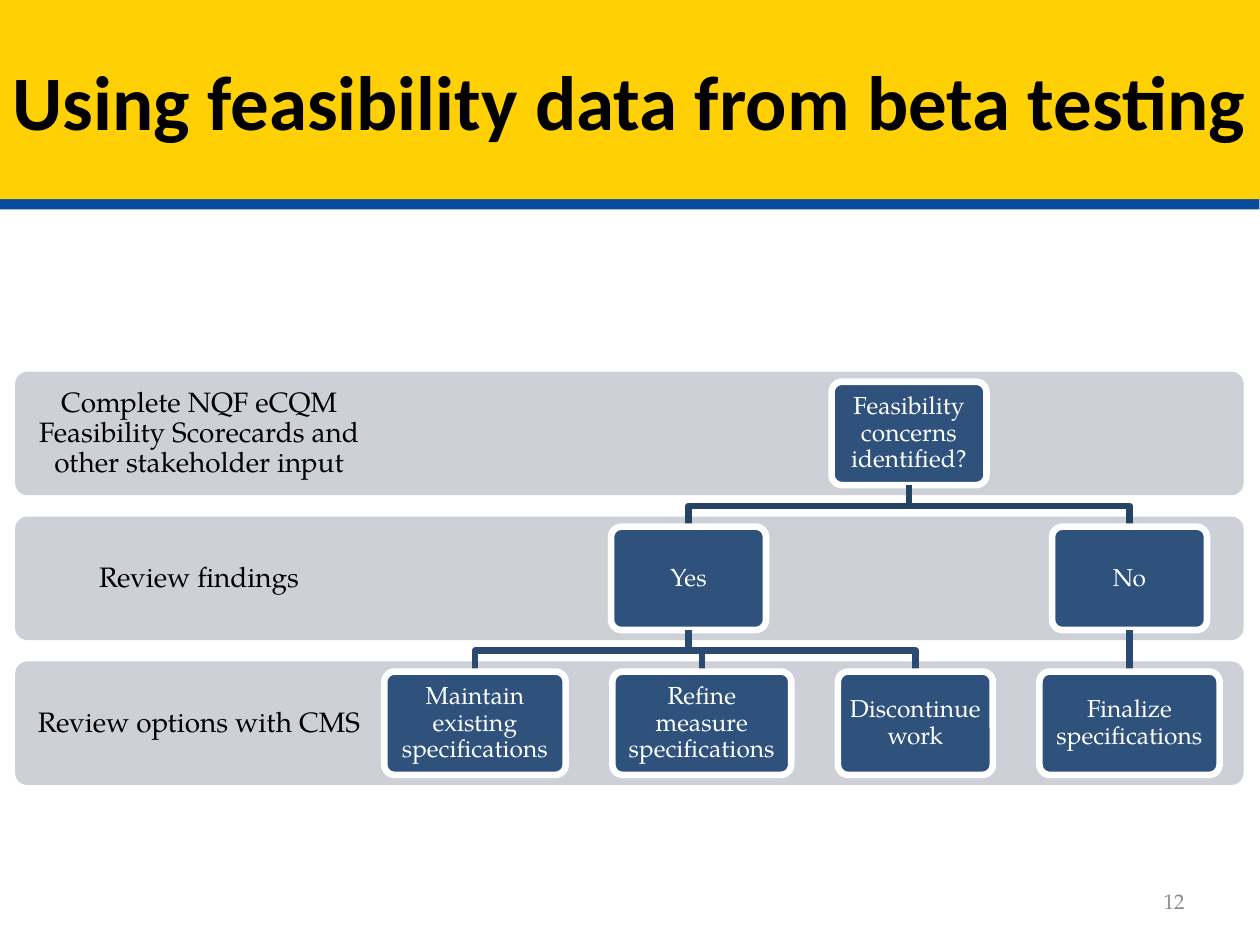
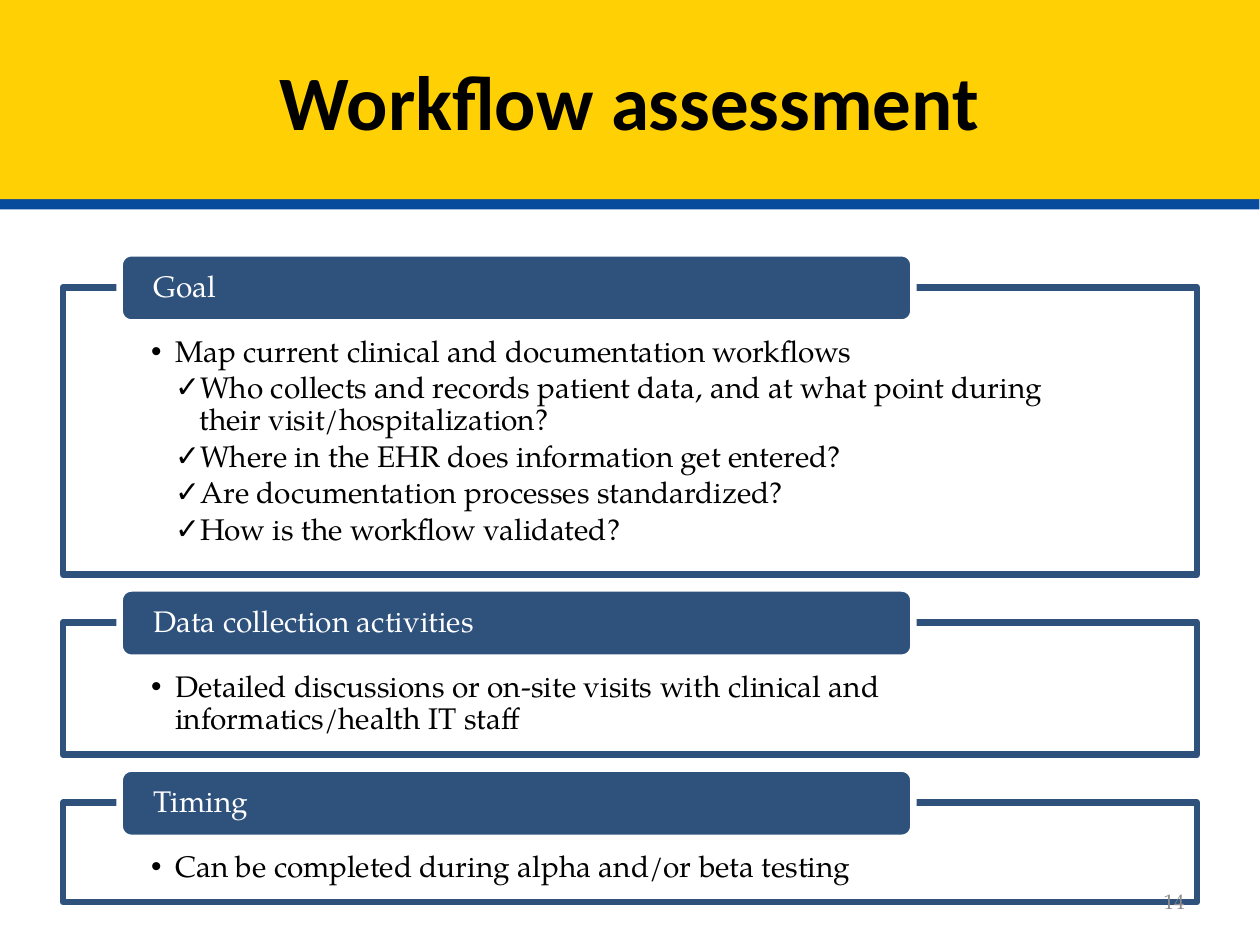
from dataclasses import dataclass
from typing import Any, NamedTuple

from lxml import etree
from pptx import Presentation
from pptx import util as u
from pptx.dml.color import RGBColor
from pptx.enum import shapes, text
from pptx.oxml.ns import qn

EMU_PER_PX = 9144  # 100 px to the inch
SLIDE_W, SLIDE_H = 1000, 750


@dataclass(frozen=True)
class Theme:
    yellow: str = "FFD004"
    blue: str = "084A9C"
    navy: str = "2F527D"
    links: tuple[str, ...] = ("264264", "2B4A71")
    band: str = "CDD1D7"
    gray: str = "8C8C8C"
    black: str = "000000"
    white: str = "FFFFFF"
    heading_font: str = "Calibri"
    body_font: str = "TeX Gyre Pagella"
    title_pt: int = 44
    list_pt: int = 17
    stage_pt: int = 16
    node_pt: int = 14
    number_pt: int = 12
    line_pt: float = 3.78


THEME = Theme()


class Box(NamedTuple):
    left: int
    top: int
    width: int
    height: int


class Node(NamedTuple):
    label: str
    left: int
    width: int
    children: tuple["Node", ...] = ()


class Section(NamedTuple):
    heading: str
    height: int
    bullet: str
    checks: tuple[str, ...] = ()


# Decision tree
STAGES = (
    "Complete NQF eCQM Feasibility Scorecards and other stakeholder input",
    "Review findings",
    "Review options with CMS",
)
STAGE_TOP, STAGE_PITCH, STAGE_H = 295, 115, 98
NODE_INSET, NODE_H = 8, 82
DECISION = Node("Feasibility concerns identified?", 660, 123, (
    Node("Yes", 485, 123, (
        Node("Maintain existing specifications", 305, 144),
        Node("Refine measure specifications", 486, 142),
        Node("Discontinue work", 665, 123),
    )),
    Node("No", 835, 123, (
        Node("Finalize specifications", 825, 143),
    )),
))

# Workflow sections
SECTIONS = (
    Section("Goal", 228, "Map current clinical and documentation workflows", (
        "Who collects and records patient data, and at what point during "
        "their visit/hospitalization?",
        "Where in the EHR does information get entered?",
        "Are documentation processes standardized?",
        "How is the workflow validated?",
    )),
    Section("Data collection activities", 105,
            "Detailed discussions or on-site visits with clinical and "
            "informatics/health IT staff"),
    Section("Timing", 79, "Can be completed during alpha and/or beta testing"),
)
SECTION_TOP, SECTION_GAP, TAB_RISE = 228, 38, 27
LIST_INDENT = 19


def px(length: float) -> u.Emu:
    return u.Emu(round(length * EMU_PER_PX))


def apply(target: Any, values: dict[str, Any]) -> None:
    for name, value in values.items():
        setattr(target, name, value)


def place(shape: Any, box: Box) -> None:
    apply(shape, {name: px(value) for name, value in box._asdict().items()})


def paint(shape: Any, fill: str | None = None, line: str | None = None) -> None:
    for part, color in ((shape.fill, fill), (shape.line.fill, line)):
        if color:
            part.solid()
            part.fore_color.rgb = RGBColor.from_string(color)
        else:
            part.background()
    if line:
        shape.line.width = u.Pt(THEME.line_pt)
    shape.shadow.inherit = False


def frame_text(shape: Any, insets: tuple[int, int, int, int], anchor: Any) -> None:
    names = ("margin_left", "margin_top", "margin_right", "margin_bottom")
    apply(shape.text_frame, {
        "word_wrap": True,
        "auto_size": text.MSO_AUTO_SIZE.NONE,
        "vertical_anchor": anchor,
        **{name: px(inset) for name, inset in zip(names, insets)},
    })


def format_paragraph(paragraph: Any, size: int, color: str, align: Any,
                     font: str = THEME.body_font, bold: bool = False,
                     spacing: float = 0.9, after: float = 0) -> None:
    apply(paragraph, {"alignment": align, "line_spacing": spacing,
                      "space_before": u.Pt(0), "space_after": u.Pt(after)})
    apply(paragraph.font, {"name": font, "size": u.Pt(size), "bold": bold})
    paragraph.font.color.rgb = RGBColor.from_string(color)


def write(shape: Any, words: str, size: int, color: str, inset: tuple[int, int],
          align: Any = text.PP_ALIGN.CENTER, **style: Any) -> None:
    frame_text(shape, inset * 2, text.MSO_ANCHOR.MIDDLE)
    paragraph = shape.text_frame.paragraphs[0]
    paragraph.text = words
    format_paragraph(paragraph, size, color, align, **style)


def add_rounded(slide: Any, box: Box, fill: str, line: str | None = None,
                corner: float = 0.1) -> Any:
    shape = slide.shapes.add_shape(shapes.MSO_SHAPE.ROUNDED_RECTANGLE, *map(px, box))
    shape.adjustments[0] = corner
    paint(shape, fill, line)
    return shape


def add_titled_slide(deck: Any, layout: int, title: str) -> Any:
    slide = deck.slides.add_slide(deck.slide_layouts[layout])
    banner = slide.shapes.title
    place(banner, Box(0, 0, SLIDE_W, 158))
    paint(banner, THEME.yellow)
    # Solid blue shadow forms the stripe below the banner
    effects = banner._element.spPr.find(qn("a:effectLst"))
    stripe = etree.SubElement(effects, qn("a:outerShdw"), blurRad="0",
                              dist=str(u.Pt(6)), dir=str(94 * 60000),
                              algn="ctr", rotWithShape="0")
    etree.SubElement(stripe, qn("a:srgbClr"), val=THEME.blue)
    write(banner, title, THEME.title_pt, THEME.black, (5, 5),
          font=THEME.heading_font, bold=True, spacing=1.0)
    return slide


def add_number(slide: Any, number: int) -> None:
    page = slide.shapes.add_textbox(*map(px, Box(717, 695, 233, 40)))
    write(page, str(number), THEME.number_pt, THEME.gray, (10, 5),
          text.PP_ALIGN.RIGHT, spacing=1.0)


def link_nodes(slide: Any, parent: Any, child: Any, color: str) -> None:
    start_x, end_x = (shape.left + shape.width // 2 for shape in (parent, child))
    start_y, end_y = parent.top + parent.height, child.top
    if start_x == end_x:
        link = slide.shapes.add_connector(shapes.MSO_CONNECTOR.STRAIGHT,
                                          start_x, start_y, end_x, end_y)
        link.begin_connect(parent, 2)
        link.end_connect(child, 0)
        link.line.color.rgb = RGBColor.from_string(color)
        link.line.width = u.Pt(THEME.line_pt)
        etree.SubElement(link._element.spPr, qn("a:effectLst"))
    else:
        middle_y = (start_y + end_y) // 2
        elbow = slide.shapes.build_freeform(start_x, start_y)
        elbow.add_line_segments(
            [(start_x, middle_y), (end_x, middle_y), (end_x, end_y)], close=False)
        link = elbow.convert_to_shape()
        paint(link, line=color)
    child._element.addprevious(link._element)


def add_node(slide: Any, node: Node, level: int = 0, parent: Any = None) -> None:
    top = STAGE_TOP + level * STAGE_PITCH + NODE_INSET
    shape = add_rounded(slide, Box(node.left, top, node.width, NODE_H),
                        THEME.navy, THEME.white)
    write(shape, node.label, THEME.node_pt, THEME.white, (6, 6))
    if parent is not None:
        link_nodes(slide, parent, shape, THEME.links[level - 1])
    for child in node.children:
        add_node(slide, child, level + 1, shape)


def add_bullet(paragraph: Any, mark: str, level: int) -> None:
    paragraph.level = level
    properties = paragraph._p.get_or_add_pPr()
    properties.set("marL", str(px(LIST_INDENT * (level + 1))))
    properties.set("indent", str(-px(LIST_INDENT)))
    etree.SubElement(properties, qn("a:buFont"), typeface="Arial")
    etree.SubElement(properties, qn("a:buChar"), char=mark)


def add_section(slide: Any, panel: Any, section: Section, top: int) -> None:
    # The list panel is a body placeholder with an outline
    place(panel, Box(50, top, 900, section.height))
    paint(panel, THEME.white, THEME.navy)
    frame_text(panel, (70, 39, 70, 13), text.MSO_ANCHOR.TOP)
    items = [("•", 0, section.bullet), *(("✓", 1, check) for check in section.checks)]
    for index, (mark, level, words) in enumerate(items):
        body = panel.text_frame
        paragraph = body.add_paragraph() if index else body.paragraphs[0]
        paragraph.text = words
        format_paragraph(paragraph, THEME.list_pt, THEME.black,
                         text.PP_ALIGN.LEFT, after=2.5)
        add_bullet(paragraph, mark, level)
    # Heading tab
    tab = add_rounded(slide, Box(95, top - TAB_RISE, 630, 55),
                      THEME.navy, THEME.white, 0.17)
    write(tab, section.heading, THEME.list_pt, THEME.white, (24, 0),
          text.PP_ALIGN.LEFT)


def build_feasibility(deck: Any) -> None:
    slide = add_titled_slide(deck, 5, "Using feasibility data from beta testing")
    for row, stage in enumerate(STAGES):
        band = Box(12, STAGE_TOP + row * STAGE_PITCH, 975, STAGE_H)
        add_rounded(slide, band, THEME.band)
        label = slide.shapes.add_textbox(*map(px, band._replace(width=292)))
        write(label, stage, THEME.stage_pt, THEME.black, (12, 12))
    add_node(slide, DECISION)
    add_number(slide, 12)


def build_workflow(deck: Any) -> None:
    slide = add_titled_slide(deck, 4, "Workflow assessment")
    spare, *panels = list(slide.placeholders)[1:]
    spare._element.getparent().remove(spare._element)
    top = SECTION_TOP
    for panel, section in zip(panels, SECTIONS):
        add_section(slide, panel, section, top)
        top += section.height + SECTION_GAP
    add_number(slide, 14)


def main() -> None:
    deck = Presentation()
    deck.slide_width, deck.slide_height = px(SLIDE_W), px(SLIDE_H)
    build_feasibility(deck)
    build_workflow(deck)
    deck.save("out.pptx")


if __name__ == "__main__":
    main()
